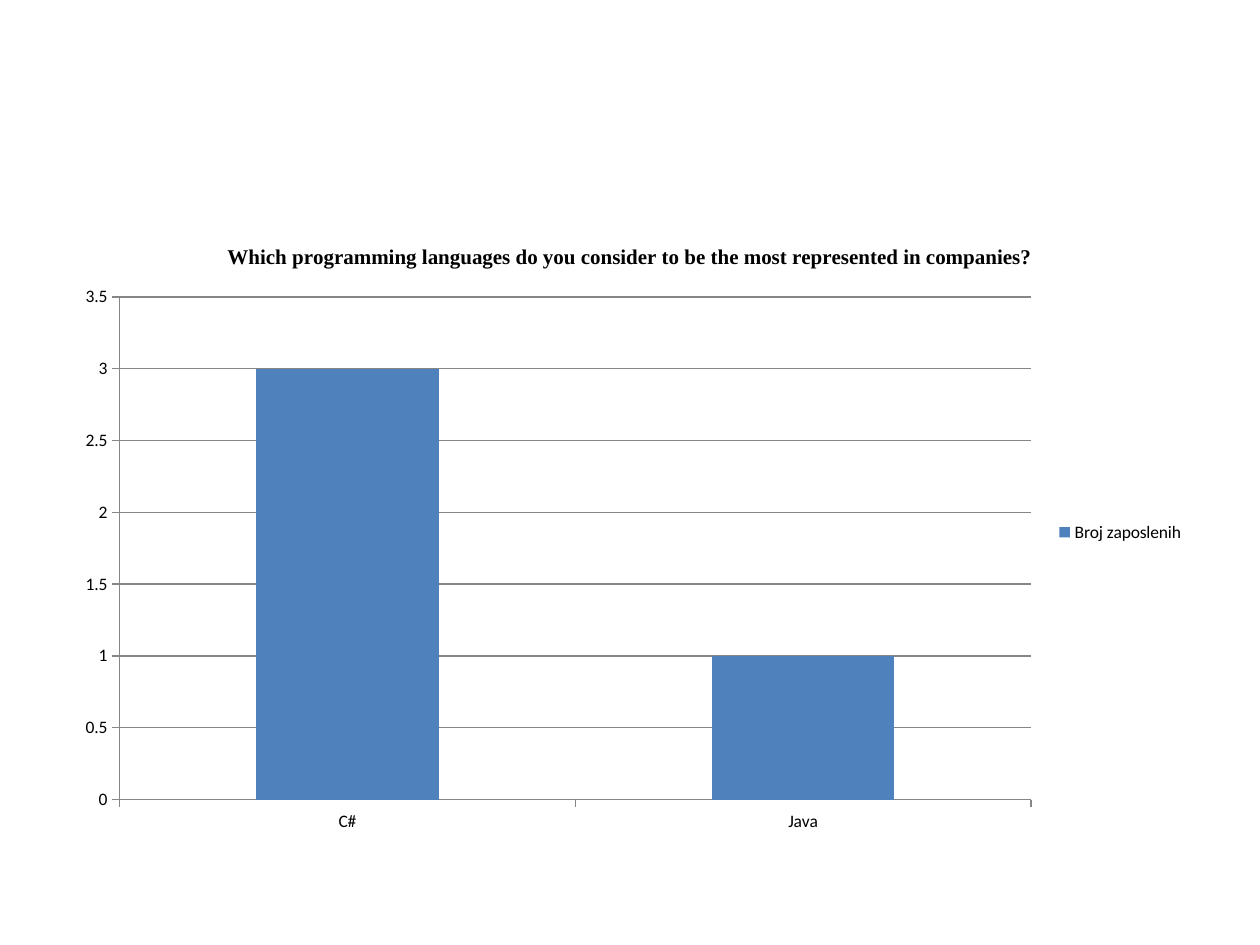
import pptx
import pptx.chart.data
import pptx.dml.color
import pptx.enum.chart
import pptx.util

Pt = pptx.util.Pt
INK, GRID, BAR = "000000", "868686", "4F81BD"


def color(value):
    return pptx.dml.color.RGBColor.from_string(value)


def format_font(font, name, size, bold=False):
    font.name = name
    font.size = Pt(size)
    font.bold = bold
    font.color.rgb = color(INK)


def format_line(line):
    line.color.rgb = color(GRID)
    line.width = Pt(0.75)


def add_survey_chart(slide, left, top, width, height):
    # Data
    data = pptx.chart.data.CategoryChartData()
    data.categories = ["C#", "Java"]
    data.add_series("Broj zaposlenih", (3, 1))
    chart = slide.shapes.add_chart(
        pptx.enum.chart.XL_CHART_TYPE.COLUMN_CLUSTERED,
        Pt(left), Pt(top), Pt(width), Pt(height), data).chart
    format_font(chart.font, "Calibri", 10)

    # Title
    chart.has_title = True
    title = chart.chart_title
    title.include_in_layout = False
    title.text_frame.text = ("Which programming languages do you consider "
                             "to be the most represented in companies?")
    run = title.text_frame.paragraphs[0].runs[0]
    format_font(run.font, "Times New Roman", 12, bold=True)

    # Legend
    chart.has_legend = True
    chart.legend.position = pptx.enum.chart.XL_LEGEND_POSITION.RIGHT
    chart.legend.include_in_layout = False
    format_font(chart.legend.font, "Calibri", 10)

    # Axes
    for axis in (chart.category_axis, chart.value_axis):
        axis.major_tick_mark = pptx.enum.chart.XL_TICK_MARK.OUTSIDE
        axis.minor_tick_mark = pptx.enum.chart.XL_TICK_MARK.NONE
        format_font(axis.tick_labels.font, "Calibri", 10)
        format_line(axis.format.line)
    value_axis = chart.value_axis
    value_axis.minimum_scale = 0
    value_axis.maximum_scale = 3.5
    value_axis.major_unit = 0.5
    value_axis.has_major_gridlines = True
    format_line(value_axis.major_gridlines.format.line)

    # Columns
    plot = chart.plots[0]
    plot.vary_by_categories = False
    plot.gap_width = 150
    fill = plot.series[0].format.fill
    fill.solid()
    fill.fore_color.rgb = color(BAR)


def main():
    presentation = pptx.Presentation()
    presentation.slide_width = Pt(720)
    presentation.slide_height = Pt(540)
    slide = presentation.slides.add_slide(presentation.slide_layouts[6])
    add_survey_chart(slide, 36, 126, 648, 356.4)
    presentation.save("out.pptx")


if __name__ == "__main__":
    main()
